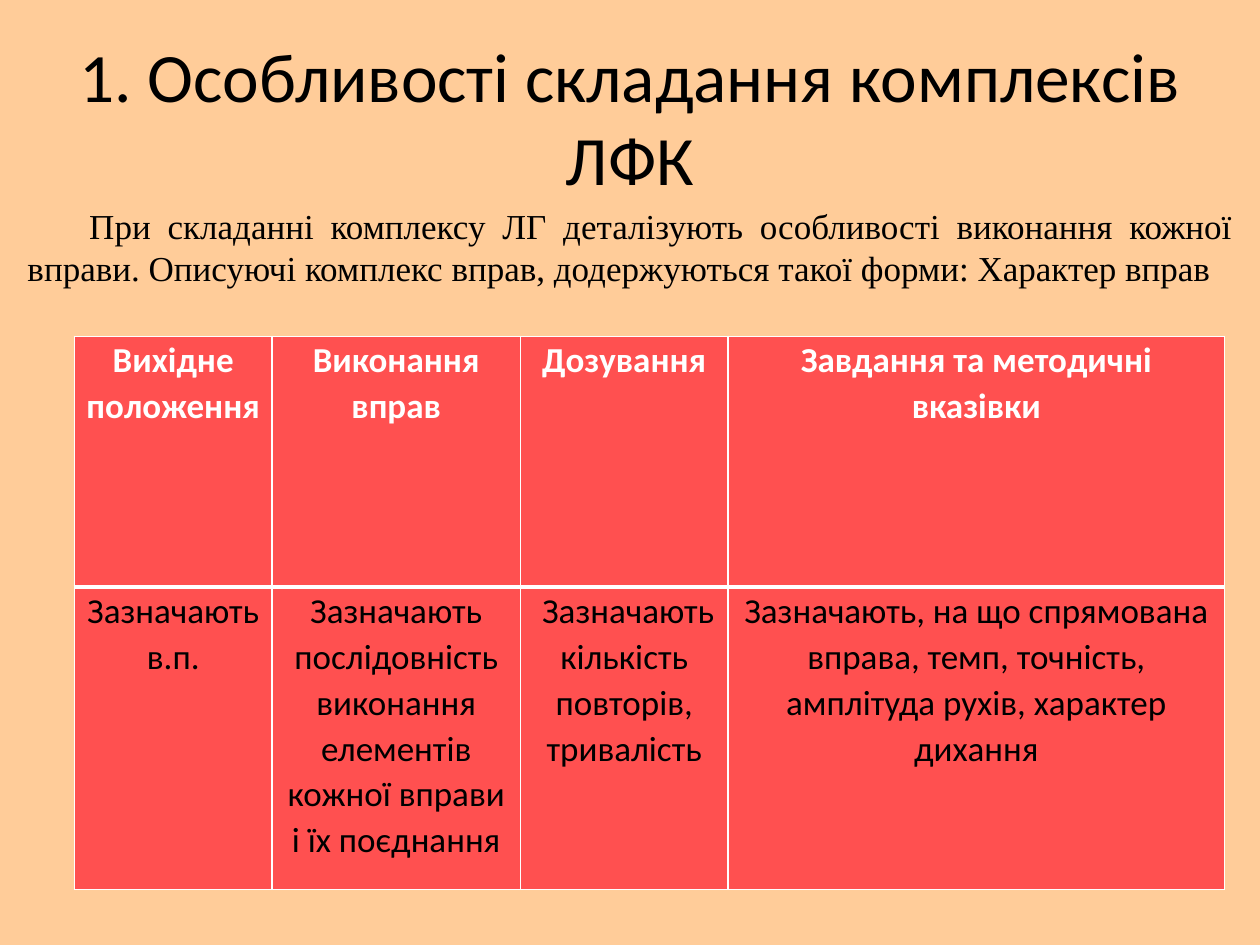
from dataclasses import dataclass

from lxml.etree import SubElement
from pptx import Presentation
from pptx.dml.color import RGBColor
from pptx.enum.text import MSO_ANCHOR as Anchor, PP_ALIGN as Align
from pptx.oxml.ns import qn
from pptx.util import Emu, Inches, Pt

SLIDE_WIDTH, SLIDE_HEIGHT = Inches(10), Inches(7.5)
COLORS = {"background": "FFCC99", "cell": "FF5050", "line": "FFFFFF",
          "header": "FFFFFF", "text": "000000"}


@dataclass(frozen=True)
class Area:
    """A rectangle given as shares of the slide's size."""
    left: float
    top: float
    width: float
    height: float

    def lengths(self) -> tuple:
        return (Emu(int(SLIDE_WIDTH * self.left)), Emu(int(SLIDE_HEIGHT * self.top)),
                Emu(int(SLIDE_WIDTH * self.width)), Emu(int(SLIDE_HEIGHT * self.height)))


@dataclass(frozen=True)
class Style:
    size: float
    color: str = "text"
    font: str = "Calibri"
    bold: bool = False
    align: Align = Align.CENTER


@dataclass(frozen=True)
class Column:
    width: float  # inches
    heading: str
    guidance: str


TITLE = Style(39.6)
INTRO = Style(20, font="Times New Roman", align=Align.JUSTIFY)
HEADING = Style(20, color="header", bold=True)
GUIDANCE = Style(20)

COLUMNS = [
    Column(1.57, "Вихідне положення", "Зазначають в.п."),
    Column(1.97, "Виконання вправ",
           "Зазначають послідовність виконання елементів кожної вправи і їх поєднання"),
    Column(1.65, "Дозування", " Зазначають кількість повторів, тривалість"),
    Column(3.94, "Завдання та методичні вказівки",
           "Зазначають, на що спрямована вправа, темп, точність, "
           "амплітуда рухів, характер дихання"),
]
ROW_HEIGHTS = [1.99, 2.4]


def write(frame, text: str, style: Style):
    para = frame.paragraphs[0]
    para.alignment = style.align
    span = para.add_run()
    span.text = text
    span.font.name, span.font.size, span.font.bold = style.font, Pt(style.size), style.bold
    span.font.color.rgb = RGBColor.from_string(COLORS[style.color])
    return para


def add_text(page, area: Area, text: str, style: Style, anchor: Anchor):
    frame = page.shapes.add_textbox(*area.lengths()).text_frame
    frame.word_wrap = True
    frame.vertical_anchor = anchor
    return write(frame, text, style)


def add_border(cell, side: str, points: float) -> None:
    line = SubElement(cell._tc.get_or_add_tcPr(), qn(f"a:ln{side}"), w=str(Pt(points)))
    fill = SubElement(line, qn("a:solidFill"))
    SubElement(fill, qn("a:srgbClr"), val=COLORS["line"])


def fill_cell(cell, text: str, style: Style, top: float, bottom: float) -> None:
    cell.margin_left = cell.margin_right = Inches(0.07)
    cell.margin_top = cell.margin_bottom = 0
    for side, points in {"L": 1, "R": 1, "T": top, "B": bottom}.items():
        add_border(cell, side, points)
    cell.fill.solid()
    cell.fill.fore_color.rgb = RGBColor.from_string(COLORS["cell"])
    write(cell.text_frame, text, style).line_spacing = 1.07


def add_guide_table(page, area: Area) -> None:
    table = page.shapes.add_table(len(ROW_HEIGHTS), len(COLUMNS), *area.lengths()).table
    for row, height in zip(table.rows, ROW_HEIGHTS):
        row.height = Inches(height)
    for index, column in enumerate(COLUMNS):
        table.columns[index].width = Inches(column.width)
        fill_cell(table.cell(0, index), column.heading, HEADING, top=1, bottom=3)
        fill_cell(table.cell(1, index), column.guidance, GUIDANCE, top=3, bottom=1)


def main() -> None:
    deck = Presentation()
    deck.slide_width, deck.slide_height = SLIDE_WIDTH, SLIDE_HEIGHT
    page = deck.slides.add_slide(deck.slide_layouts[6])
    page.background.fill.solid()
    page.background.fill.fore_color.rgb = RGBColor.from_string(COLORS["background"])

    # Title
    add_text(page, Area(0.05, 0.04, 0.9, 1 / 6),
             "1. Особливості складання комплексів ЛФК", TITLE, Anchor.MIDDLE)

    # Table of exercise descriptions
    add_guide_table(page, Area(0.059, 0.356, 0.913, 0.585))

    # Introduction with an indented first line
    intro = add_text(page, Area(0.012, 0.21, 0.976, 0.148),
                     "При складанні комплексу ЛГ деталізують особливості виконання кожної "
                     "вправи. Описуючі комплекс вправ, додержуються такої форми: "
                     "Характер вправ", INTRO, Anchor.TOP)
    intro._p.get_or_add_pPr().set("indent", str(Inches(0.49)))

    deck.save("out.pptx")


if __name__ == "__main__":
    main()
